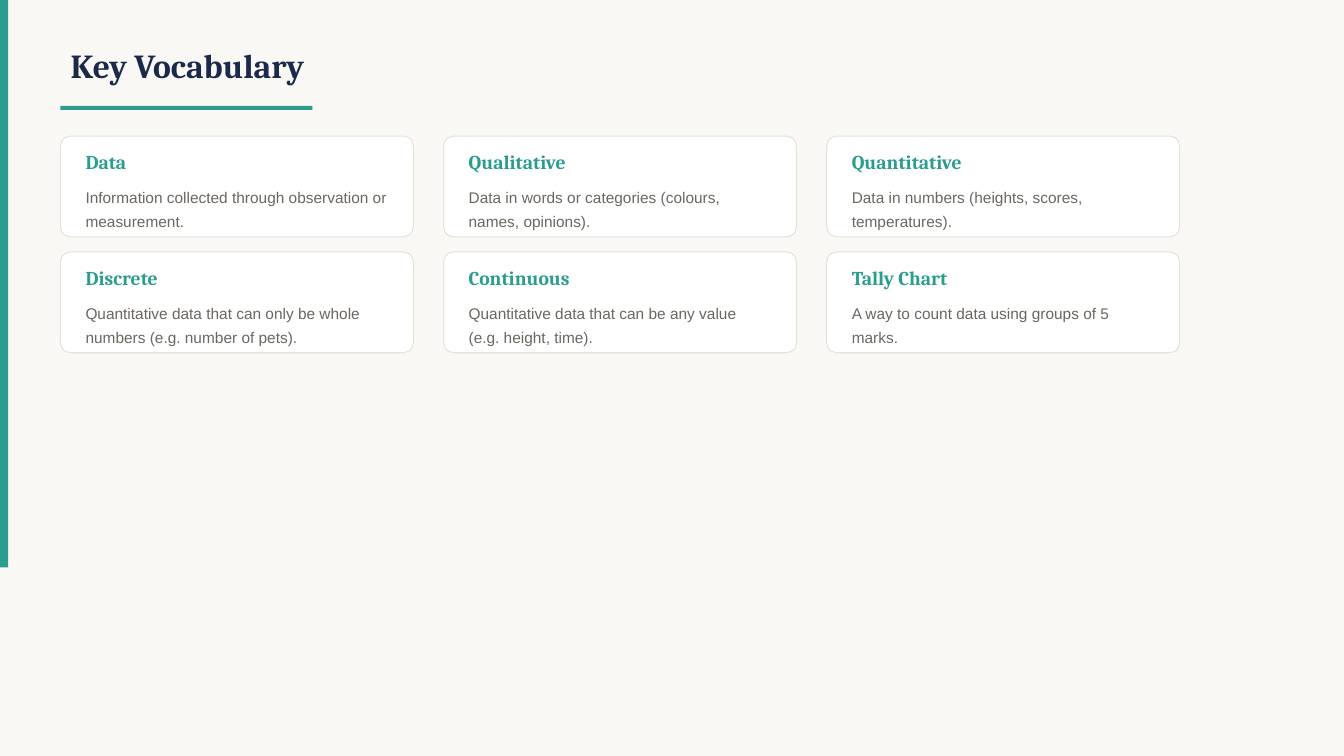
"""Build the Key Vocabulary slide: six definition cards in a grid."""
import pptx
import pptx.dml.color
import pptx.enum.shapes
import pptx.enum.text
import pptx.util

Inches = pptx.util.Inches
SHAPE = pptx.enum.shapes.MSO_SHAPE


class Theme:
    background = "FAF8F5"
    accent = "2A9D8F"
    card = "FFFFFF"
    border = "E5E2DC"
    title = ("Cambria", 24, "1B2A4A", True)
    term = ("Cambria", 14, accent, True)
    meaning = ("Arial", 11, "6B6660", False)


def add_block(slide, kind, left, top, width, height, color):
    sp = slide.shapes.add_shape(kind, Inches(left), Inches(top), Inches(width), Inches(height))
    sp.shadow.inherit = False
    sp.fill.solid()
    sp.fill.fore_color.rgb = pptx.dml.color.RGBColor.from_string(color)
    sp.line.fill.background()
    return sp


def write(sp, text, style, left, top, width, height, spacing=None):
    sp.left, sp.top, sp.width, sp.height = map(Inches, (left, top, width, height))
    tf = sp.text_frame
    tf.text = text
    tf.word_wrap = True
    tf.auto_size = pptx.enum.text.MSO_AUTO_SIZE.NONE
    tf.vertical_anchor = pptx.enum.text.MSO_ANCHOR.MIDDLE
    p = tf.paragraphs[0]
    p.alignment = pptx.enum.text.PP_ALIGN.LEFT
    p.line_spacing = spacing
    font = p.runs[0].font
    font.name, size, color, font.bold = style
    font.size = pptx.util.Pt(size)
    font.color.rgb = pptx.dml.color.RGBColor.from_string(color)


prs = pptx.Presentation()
prs.slide_width, prs.slide_height = Inches(13.33), Inches(7.5)
slide = prs.slides.add_slide(prs.slide_layouts.get_by_name("Title Only"))
slide.background.fill.solid()
slide.background.fill.fore_color.rgb = pptx.dml.color.RGBColor.from_string(Theme.background)

add_block(slide, SHAPE.RECTANGLE, 0, 0, 0.08, 5.63, Theme.accent)
write(slide.shapes.title, "Key Vocabulary", Theme.title, 0.6, 0.3, 10, 0.7)
add_block(slide, SHAPE.RECTANGLE, 0.6, 1.05, 2.5, 0.04, Theme.accent)

vocabulary = [
    ("Data", "Information collected through observation or measurement."),
    ("Qualitative", "Data in words or categories (colours, names, opinions)."),
    ("Quantitative", "Data in numbers (heights, scores, temperatures)."),
    ("Discrete", "Quantitative data that can only be whole numbers (e.g. number of pets)."),
    ("Continuous", "Quantitative data that can be any value (e.g. height, time)."),
    ("Tally Chart", "A way to count data using groups of 5 marks."),
]
columns, card_width, card_height, column_gap, row_gap = 3, 3.5, 1, 0.3, 0.15
padding = 0.15

for i, (term, meaning) in enumerate(vocabulary):
    row, column = divmod(i, columns)
    left = 0.6 + column * (card_width + column_gap)
    top = 1.35 + row * (card_height + row_gap)
    card = add_block(slide, SHAPE.ROUNDED_RECTANGLE, left, top, card_width, card_height, Theme.card)
    card.adjustments[0] = 0.1
    card.line.color.rgb = pptx.dml.color.RGBColor.from_string(Theme.border)
    card.line.width = pptx.util.Pt(0.75)
    text_left, text_width = left + padding, card_width - 2 * padding
    for text, style, offset, height, spacing in (
        (term, Theme.term, 0.08, 0.35, None),
        (meaning, Theme.meaning, 0.45, 0.5, 1.3),
    ):
        box = slide.shapes.add_textbox(0, 0, 0, 0)
        write(box, text, style, text_left, top + offset, text_width, height, spacing)

prs.save("out.pptx")
